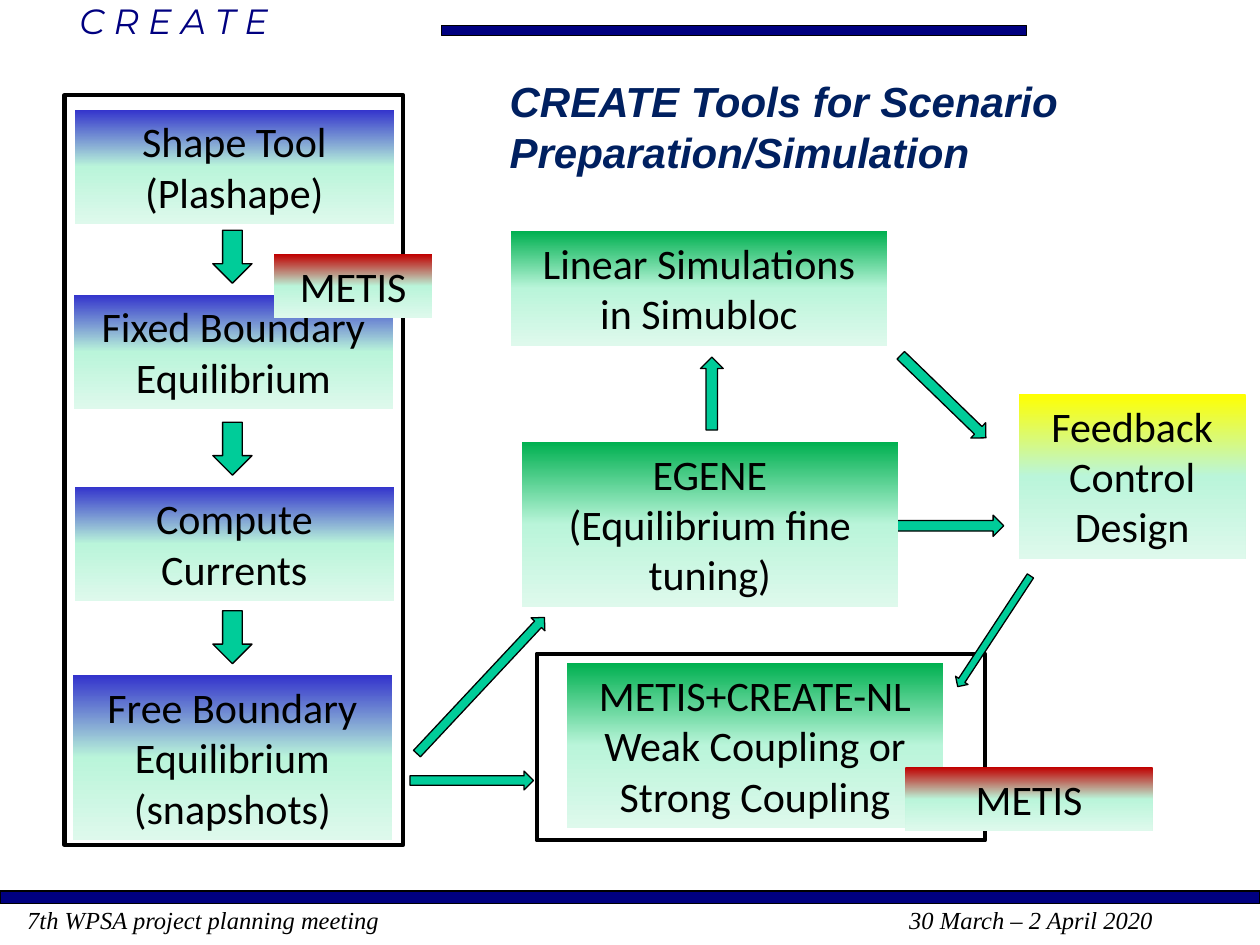
from lxml.etree import SubElement
from copy import deepcopy
from pptx import Presentation
from pptx.dml.color import RGBColor
from pptx.enum.shapes import MSO_SHAPE as SHAPE
from pptx.enum.text import MSO_ANCHOR as ANCHOR, MSO_AUTO_SIZE as AUTO, PP_ALIGN as ALIGN
from pptx.oxml.ns import qn
from pptx.util import Cm, Pt

NAVY = RGBColor(0x00, 0x00, 0x80)
TITLE_BLUE = RGBColor(0x00, 0x20, 0x60)
BLACK = RGBColor(0x00, 0x00, 0x00)
TEAL = RGBColor(0x00, 0xCC, 0x99)
BLUE = RGBColor(0x33, 0x33, 0xCC)
GREEN = RGBColor(0x00, 0xB0, 0x50)
YELLOW = RGBColor(0xFF, 0xFF, 0x00)
RED = RGBColor(0xC0, 0x00, 0x00)
MINT = RGBColor(0xBA, 0xF5, 0xDA)
PALE_MINT = RGBColor(0xDE, 0xF9, 0xEC)

ONE_LINE, TWO_LINES, THREE_LINES = 1.28, 2.31, 3.33
GREEN_W = 7.58


def style_text(tf, size, font, color, bold=False, italic=False, align=ALIGN.LEFT):
    for p in tf.paragraphs:
        p.alignment = align
        for r in p.runs:
            r.font.size, r.font.name = Pt(size), font
            r.font.bold, r.font.italic = bold, italic
            r.font.color.rgb = color


def add_plain(s, kind, x, y, w, h, fill=None, line_width=0.75):
    sp = s.shapes.add_shape(kind, Cm(x), Cm(y), Cm(w), Cm(h))
    sp.shadow.inherit = False
    if fill is None:
        sp.fill.background()
    else:
        sp.fill.solid()
        sp.fill.fore_color.rgb = fill
    sp.line.color.rgb = BLACK
    sp.line.width = Pt(line_width)
    return sp


def add_frame(s, x, y, w, h):
    add_plain(s, SHAPE.RECTANGLE, x, y, w, h, line_width=2.5)


def add_arrow(s, x, y, w, h, rotation=0):
    """Place an up arrow, turned clockwise by rotation degrees."""
    add_plain(s, SHAPE.UP_ARROW, x, y, w, h, TEAL).rotation = rotation


def add_block(s, text, x, y, w, h, color):
    """Place a labelled block that fades from color to pale mint."""
    sp = add_plain(s, SHAPE.RECTANGLE, x, y, w, h)
    sp.line.fill.background()
    sp.fill.gradient()
    sp.fill.gradient_angle = 270
    stops = sp._element.spPr.find(".//" + qn("a:gsLst"))
    stops.append(deepcopy(stops[-1]))
    for stop, position, rgb in zip(sp.fill.gradient_stops, (0, 0.5, 1), (color, MINT, PALE_MINT)):
        stop.position = position
        stop.color.rgb = rgb
    tf = sp.text_frame
    tf.word_wrap = True
    tf.vertical_anchor = ANCHOR.TOP
    tf.text = text
    style_text(tf, 24, "Calibri", BLACK, align=ALIGN.CENTER)


def add_header(s, x, y):
    table = s.shapes.add_table(1, 1, Cm(x), Cm(y), Cm(5.74), Cm(0.84)).table
    table.first_row = table.horz_banding = False
    cell = table.cell(0, 0)
    cell.fill.background()
    cell.margin_left = cell.margin_right = Cm(0.18)
    cell.margin_top = cell.margin_bottom = 0
    cell.text = "C R E A T E"
    style_text(cell.text_frame, 20, "Montserrat", NAVY, italic=True)
    add_plain(s, SHAPE.RECTANGLE, x + 7.48, y + 0.52, 11.8, 0.2, NAVY)


def add_footer(s, x, y, w):
    add_plain(s, SHAPE.RECTANGLE, x, y, w, 0.25, NAVY)
    tf = s.shapes.add_textbox(Cm(x + 0.3), Cm(y + 0.16), Cm(w - 0.2), Cm(0.86)).text_frame
    tf.word_wrap = True
    p = tf.paragraphs[0]
    p.text = "7th WPSA project planning meeting\t30 March – 2 April 2020"
    tabs = SubElement(p._p.get_or_add_pPr(), qn("a:tabLst"))
    SubElement(tabs, qn("a:tab"), pos=str(Cm(17.78)), algn="l")
    style_text(tf, 14, "Times New Roman", BLACK, italic=True)


def add_title(s, x, y, w, h):
    sp = s.shapes.title
    sp.left, sp.top, sp.width, sp.height = Cm(x), Cm(y), Cm(w), Cm(h)
    tf = sp.text_frame
    tf.text = "CREATE Tools for Scenario Preparation/Simulation"
    tf.word_wrap = True
    tf.auto_size = AUTO.NONE
    tf.vertical_anchor = ANCHOR.TOP
    style_text(tf, 24, "Arial", TITLE_BLUE, bold=True, italic=True)


def add_preparation(s, x, y, w, h):
    """Framed column of equilibrium steps, read from top to bottom."""
    add_frame(s, x, y, w, h)
    steps = [
        ("Shape Tool\n(Plashape)", 0.21, 0.29, TWO_LINES),
        ("Fixed Boundary Equilibrium", 0.19, 4.02, TWO_LINES),
        ("Compute Currents", 0.21, 7.89, TWO_LINES),
        ("Free Boundary Equilibrium (snapshots)", 0.17, 11.69, THREE_LINES),
    ]
    for text, dx, dy, height in steps:
        add_block(s, text, x + dx, y + dy, 6.43, height, BLUE)
    for dy in (2.72, 6.59, 10.39):
        add_arrow(s, x + 2.99, y + dy, 0.79, 1.07, 180)
    add_block(s, "METIS", x + 4.22, y + 3.21, 3.2, ONE_LINE, RED)


def add_simulation(s, x, y):
    """Linear simulation, fine tuning and feedback design with their links."""
    add_arrow(s, x + 3.83, y + 2.54, 0.46, 1.47)
    add_arrow(s, x + 8.64, y + 4.85, 0.43, 2.18, 90)
    add_arrow(s, x + 8.51, y + 2.14, 0.43, 2.39, 134.1)
    add_block(s, "Feedback Control Design", x + 10.25, y + 3.28, 4.57, THREE_LINES, YELLOW)
    add_block(s, "EGENE\n(Equilibrium fine tuning)", x + 0.23, y + 4.25,
              GREEN_W, THREE_LINES, GREEN)
    add_block(s, "Linear Simulations in Simubloc", x + 0.01, y, GREEN_W, TWO_LINES, GREEN)


def add_coupling(s, x, y, w, h):
    """Framed coupling step with the arrows around it."""
    add_block(s, "METIS+CREATE-NL Weak Coupling or Strong Coupling",
              x + 0.61, y + 0.19, GREEN_W, THREE_LINES, GREEN)
    add_frame(s, x, y, w, h)
    add_arrow(s, x + 9.07, y - 1.79, 0.3, 2.67, 213.3)
    add_arrow(s, x - 1.32, y - 1.24, 0.38, 3.76, 43.1)
    add_block(s, "METIS", x + 7.43, y + 2.29, 4.99, ONE_LINE, RED)
    add_arrow(s, x - 1.5, y + 1.31, 0.38, 2.49, 90)


def main():
    prs = Presentation()
    prs.slide_width, prs.slide_height = Cm(25.4), Cm(19.05)
    s = prs.slides.add_slide(prs.slide_layouts[5])
    add_header(s, 1.42, 0)
    add_footer(s, 0, 17.96, 25.4)
    add_title(s, 10.02, 1.4, 15.7, 2.31)
    add_preparation(s, 1.3, 1.92, 6.83, 15.11)
    add_simulation(s, 10.29, 4.66)
    add_coupling(s, 10.82, 13.18, 9.04, 3.76)
    prs.save("out.pptx")


if __name__ == "__main__":
    main()
